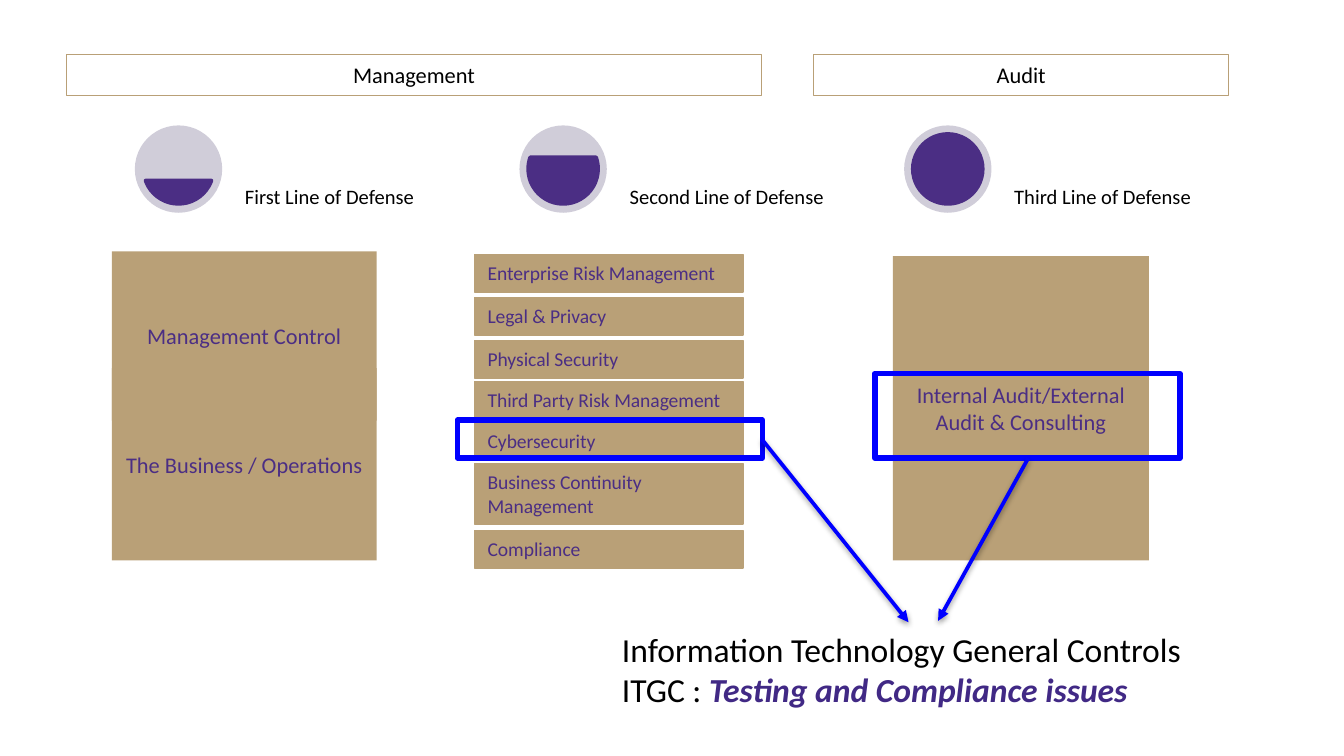
"""Build the three lines of defense slide with its IT general controls callout."""
from lxml import etree
from pptx import Presentation
from pptx.dml.color import RGBColor
from pptx.enum.shapes import MSO_CONNECTOR, MSO_SHAPE
from pptx.enum.text import MSO_ANCHOR, MSO_AUTO_SIZE, PP_ALIGN
from pptx.oxml import parse_xml
from pptx.oxml.ns import nsdecls, qn
from pptx.util import Inches, Pt

RECTANGLE, ELLIPSE, CHORD = MSO_SHAPE.RECTANGLE, MSO_SHAPE.OVAL, MSO_SHAPE.CHORD
TOP, MIDDLE, BOTTOM = MSO_ANCHOR.TOP, MSO_ANCHOR.MIDDLE, MSO_ANCHOR.BOTTOM
LEFT, CENTER = PP_ALIGN.LEFT, PP_ALIGN.CENTER
GROW = MSO_AUTO_SIZE.SHAPE_TO_FIT_TEXT
STRAIGHT = MSO_CONNECTOR.STRAIGHT
COLORS = {"gold": "B9A077", "purple": "4B2E84", "emphasis": "412985",
          "gray": "D0CDD9", "blue": "0000FF", "black": "000000"}

presentation = Presentation()
presentation.slide_width = Inches(10)
presentation.slide_height = presentation.slide_width * 9 // 16
CELL = presentation.slide_width // 100
slide = presentation.slides.add_slide(presentation.slide_layouts[6])


def add_box(kind, columns, rows, fill=None, line=None, line_width=0.75):
    left, width = columns
    top, height = rows
    shape = slide.shapes.add_shape(
        kind, *(round(length * CELL) for length in (left, top, width, height)))
    shape.shadow.inherit = False
    if fill:
        shape.fill.solid()
        shape.fill.fore_color.rgb = RGBColor.from_string(COLORS[fill])
    else:
        shape.fill.background()
    if line:
        shape.line.color.rgb = RGBColor.from_string(COLORS[line])
        shape.line.width = Pt(line_width)
    else:
        shape.line.fill.background()
    return shape


def write(shape, text, size, color, anchor, alignment):
    frame = shape.text_frame
    frame.text = text
    frame.word_wrap = True
    frame.vertical_anchor = anchor
    for paragraph in frame.paragraphs:
        paragraph.alignment = alignment
        for run in paragraph.runs:
            run.font.name = "Calibri"
            run.font.size = Pt(size)
            run.font.color.rgb = RGBColor.from_string(COLORS[color])
    return frame


DEFENSE_LINES = [("First Line of Defense", 10.03, (11.683, 96.317)),
                 ("Second Line of Defense", 38.65, (204.317, 119.683)),
                 ("Third Line of Defense", 67.27, (162, 162))]
for label, left, angles in DEFENSE_LINES:
    add_box(ELLIPSE, (left, 6.5), (9.33, 6.5), "gray")
    chord = add_box(CHORD, (left + 0.65, 5.2), (9.97, 5.2), "purple", "purple", 2)
    chord.adjustments[0], chord.adjustments[1] = angles
    caption = add_box(RECTANGLE, (left + 7.9, 19.4), (9.33, 6.5))
    frame = write(caption, label, 11, "black", BOTTOM, LEFT)
    frame.margin_left = frame.margin_right = Inches(0.03)
    frame.margin_top = frame.margin_bottom = Inches(0.03)
    frame.paragraphs[0].line_spacing = 0.9

LARGE_BLOCKS = [("Management Control", (8.33, 19.7), (18.7, 12.6)),
                ("The Business / Operations", (8.33, 19.7), (27.4, 14.3)),
                ("Internal Audit/External Audit & Consulting", (66.44, 19.05), (19.05, 22.65))]
for label, columns, rows in LARGE_BLOCKS:
    block = add_box(RECTANGLE, columns, rows, "gold")
    write(block, label, 12, "purple", MIDDLE, CENTER)

SECOND_LINE_FUNCTIONS = [("Enterprise Risk Management", 18.93, 2.8),
                         ("Legal & Privacy", 22.13, 2.8),
                         ("Physical Security", 25.33, 2.8),
                         ("Third Party Risk Management", 28.4, 2.8),
                         ("Cybersecurity", 31.4, 2.8),
                         ("Business Continuity Management", 34.5, 4.5),
                         ("Compliance", 39.47, 2.8)]
for label, top, height in SECOND_LINE_FUNCTIONS:
    function_box = add_box(RECTANGLE, (35.3, 20), (top, height), "gold", "gold")
    write(function_box, label, 10.5, "purple", TOP, LEFT).auto_size = GROW

for label, columns in [("Management", (4.93, 51.75)), ("Audit", (60.53, 30.9))]:
    header = add_box(RECTANGLE, columns, (4.07, 3.03), line="gold")
    write(header, label, 12, "black", TOP, CENTER).auto_size = GROW

for columns, rows in [((34.03, 22.7), (31.27, 2.8)), ((65.1, 22.7), (27.8, 6.3))]:
    add_box(RECTANGLE, columns, rows, line="blue", line_width=3)

for points in [(56.7, 32.7, 67.6, 46.3), (76.5, 34.1, 69.8, 46.2)]:
    arrow = slide.shapes.add_connector(
        STRAIGHT, *(round(point * CELL) for point in points))
    arrow.line.color.rgb = RGBColor.from_string(COLORS["blue"])
    arrow.line.width = Pt(2)
    etree.SubElement(arrow.line._get_or_add_ln(), qn("a:tailEnd"), type="triangle")
    arrow._element.spPr.append(parse_xml(
        f'<a:effectLst {nsdecls("a")}><a:outerShdw blurRad="{Pt(3.1)}" '
        f'dist="{Pt(1.6)}" dir="5400000" rotWithShape="0">'
        f'<a:srgbClr val="{COLORS["black"]}"><a:alpha val="38000"/></a:srgbClr>'
        '</a:outerShdw></a:effectLst>'))

callout = slide.shapes.add_textbox(
    *(round(length * CELL) for length in (45.3, 46.3, 44.7, 7.1)))
frame = write(callout, "Information Technology General Controls\nITGC : ",
              18, "black", TOP, LEFT)
frame.word_wrap = False
frame.auto_size = GROW
emphasis = frame.paragraphs[1].add_run()
emphasis.text = "Testing and Compliance issues"
emphasis.font.name = "Calibri"
emphasis.font.size = Pt(18)
emphasis.font.bold = emphasis.font.italic = True
emphasis.font.color.rgb = RGBColor.from_string(COLORS["emphasis"])

presentation.save("out.pptx")
